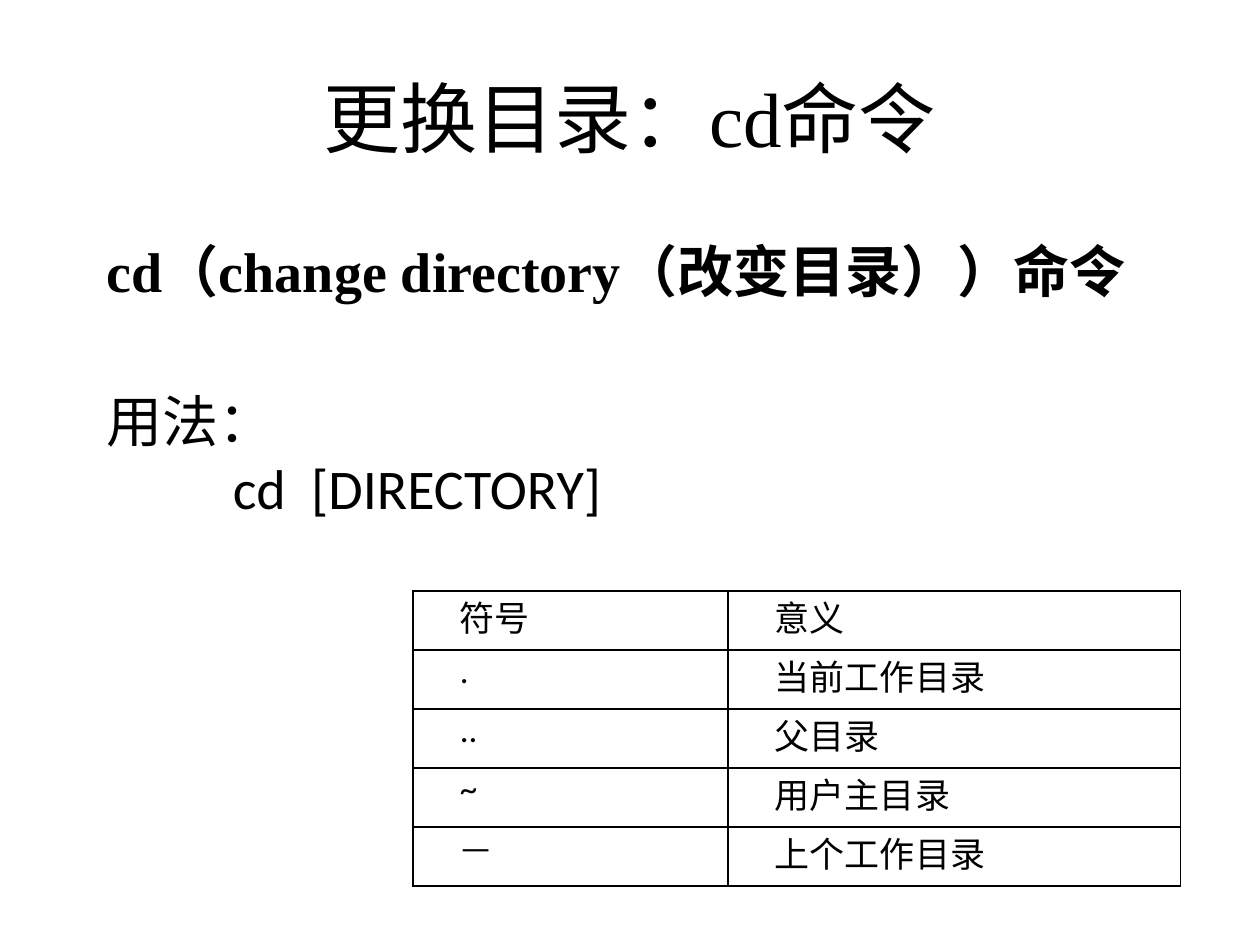
import lxml.etree
import pptx
import pptx.dml.color
import pptx.enum.text
import pptx.oxml.ns
import pptx.util

Cm = pptx.util.Cm
Pt = pptx.util.Pt
qn = pptx.oxml.ns.qn

COLORS = {"text": "000000", "border": "000000", "page": "FFFFFF"}
LATIN = "Times New Roman"
PLAIN = "Calibri"

SYMBOLS = [
    ("符号", "意义"),
    (".", "当前工作目录"),
    ("..", "父目录"),
    ("~", "用户主目录"),
    ("—", "上个工作目录"),
]


def color(name):
    return pptx.dml.color.RGBColor.from_string(COLORS[name])


class Page:
    """One slide together with the style of its elements."""

    def __init__(self, deck):
        self.slide = deck.slides.add_slide(deck.slide_layouts[1])
        background = self.slide.background.fill
        background.solid()
        background.fore_color.rgb = color("page")

    def style(self, para, size, font, bold=False):
        for span in para.runs:
            span.font.size = Pt(size)
            span.font.name = font
            span.font.bold = bold
            span.font.color.rgb = color("text")

    def indent(self, para, left, first):
        properties = para._p.get_or_add_pPr()
        properties.set("marL", str(Cm(left)))
        properties.set("indent", str(Cm(first)))
        return properties

    def place(self, box, left, top, width, height):
        box.left, box.top = Cm(left), Cm(top)
        box.width, box.height = Cm(width), Cm(height)

    def title(self, text, *area):
        box = self.slide.shapes.title
        self.place(box, *area)
        frame = box.text_frame
        frame.text = text
        frame.vertical_anchor = pptx.enum.text.MSO_ANCHOR.MIDDLE
        para = frame.paragraphs[0]
        para.alignment = pptx.enum.text.PP_ALIGN.CENTER
        self.style(para, 44, LATIN)

    def body(self, lines, *area):
        """Lines hold text, level, left and first indent, space before, font, bold."""
        box = self.slide.placeholders[1]
        self.place(box, *area)
        frame = box.text_frame
        frame.text = "\n".join(line[0] for line in lines)
        for para, line in zip(frame.paragraphs, lines):
            _, level, left, first, space, font, bold = line
            para.level = level
            para.space_before = Pt(space)
            properties = self.indent(para, left, first)
            lxml.etree.SubElement(properties, qn("a:buNone"))
            self.style(para, 32, font, bold)

    def border(self, cell):
        properties = cell._tc.get_or_add_tcPr()
        for position, side in enumerate(("lnL", "lnR", "lnT", "lnB")):
            line = lxml.etree.Element(qn("a:" + side), w=str(Pt(1)))
            fill = lxml.etree.SubElement(line, qn("a:solidFill"))
            lxml.etree.SubElement(fill, qn("a:srgbClr"), val=COLORS["border"])
            properties.insert(position, line)

    def table(self, rows, left, top, widths, row_height):
        frame = self.slide.shapes.add_table(
            len(rows), len(widths), Cm(left), Cm(top),
            Cm(sum(widths)), Cm(row_height * len(rows)))
        table = frame.table
        table.first_row = table.horz_banding = False
        for column, width in zip(table.columns, widths):
            column.width = Cm(width)
        for row, texts in zip(table.rows, rows):
            row.height = Cm(row_height)
            for cell, text in zip(row.cells, texts):
                cell.text = text
                cell.margin_left = cell.margin_right = Cm(0.18)
                cell.margin_top = cell.margin_bottom = 0
                cell.fill.background()
                self.border(cell)
                para = cell.text_frame.paragraphs[0]
                self.indent(para, 0, 0.76)
                self.style(para, 20, PLAIN)


def main():
    deck = pptx.Presentation()
    deck.slide_width, deck.slide_height = Cm(25.4), Cm(19.05)
    page = Page(deck)
    page.title("更换目录：cd命令", 1.27, 0.76, 22.86, 3.18)
    page.body([
        ("cd（change directory（改变目录））命令", 0, 0.94, -0.94, 0, LATIN, True),
        ("用法：", 0, 0.94, -0.94, 46.8, PLAIN, False),
        ("cd  [DIRECTORY]", 1, 2.54, 0, 0, PLAIN, False),
    ], 1.9, 4.65, 22.83, 12.6)
    page.table(SYMBOLS, 8.33, 11.91, (6.35, 9.12), 1.19)
    deck.save("out.pptx")


if __name__ == "__main__":
    main()
